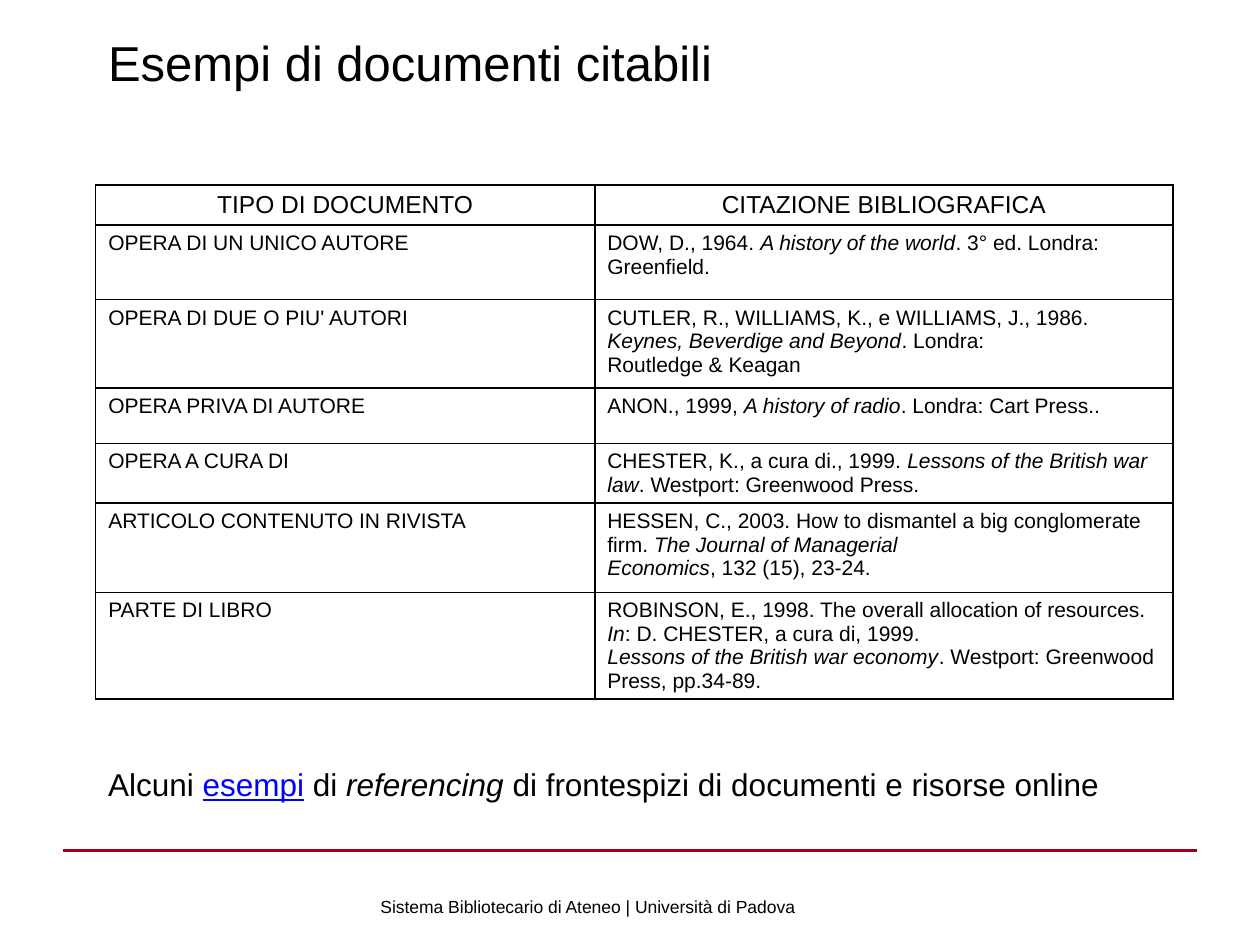
"""Build the slide that lists examples of citable documents."""
from dataclasses import dataclass

from lxml import etree
from pptx import Presentation
from pptx.dml.color import RGBColor
from pptx.enum.shapes import MSO_CONNECTOR
from pptx.enum.text import MSO_ANCHOR, PP_ALIGN
from pptx.oxml.ns import qn
from pptx.util import Cm, Pt

BLACK = RGBColor(0x00, 0x00, 0x00)
BLUE = RGBColor(0x00, 0x00, 0xFF)
CRIMSON = RGBColor(0xA5, 0x00, 0x21)
STRAIGHT = MSO_CONNECTOR.STRAIGHT
TOP, BOTTOM = MSO_ANCHOR.TOP, MSO_ANCHOR.BOTTOM
LEFT, CENTER = PP_ALIGN.LEFT, PP_ALIGN.CENTER
FONT = "Arial"
ITALIC_MARK = "_"
LINK_WORD = "esempi"
MARGIN = 1.93
COLUMN_WIDTHS = (10.06, 11.66)
BORDER_SIDES = ("a:lnL", "a:lnR", "a:lnT", "a:lnB")
BORDER_WIDTH = Pt(1)


@dataclass(frozen=True)
class Row:
    """A document type, its citation lines and the row height in centimetres."""
    kind: str
    citation: tuple[str, ...]
    height: float
    size: int = 12
    align: PP_ALIGN = LEFT


@dataclass(frozen=True)
class Label:
    """A text box with its place in centimetres."""
    text: str
    left: float
    top: float
    width: float
    height: float
    size: int
    anchor: MSO_ANCHOR = TOP
    wrap: bool = True


ROWS = (
    Row("TIPO DI DOCUMENTO", ("CITAZIONE BIBLIOGRAFICA",), 0.81, 14, CENTER),
    Row("OPERA DI UN UNICO AUTORE",
        ("DOW, D., 1964. _A history of the world_. 3° ed. Londra: Greenfield.",), 1.5),
    Row("OPERA DI DUE O PIU' AUTORI",
        ("CUTLER, R., WILLIAMS, K., e WILLIAMS, J., 1986. "
         "_Keynes, Beverdige and Beyond_. Londra:",
         "Routledge & Keagan"), 1.78),
    Row("OPERA PRIVA DI AUTORE",
        ("ANON., 1999, _A history of radio_. Londra: Cart Press..",), 1.12),
    Row("OPERA A CURA DI",
        ("CHESTER, K., a cura di., 1999. _Lessons of the British war law_. "
         "Westport: Greenwood Press.",), 1.2),
    Row("ARTICOLO CONTENUTO IN RIVISTA",
        ("HESSEN, C., 2003. How to dismantel a big conglomerate firm. "
         "_The Journal of Managerial_",
         "_Economics_, 132 (15), 23-24."), 1.8),
    Row("PARTE DI LIBRO",
        ("ROBINSON, E., 1998. The overall allocation of resources. "
         "_In_: D. CHESTER, a cura di, 1999.",
         "_Lessons of the British war economy_. Westport: Greenwood Press, pp.34-89."), 2.06),
)

LABELS = (
    Label("Sistema Bibliotecario di Ateneo | Università di Padova",
          7.42, 17.35, 9.96, 1.27, 10, BOTTOM),
    Label("Esempi di documenti citabili", MARGIN, 0.53, 17.2, 1.45, 28),
)
EXAMPLES = Label("Alcuni ", MARGIN, 15.29, 20.57, 1.02, 18, wrap=False)


def add_spans(para, text: str) -> None:
    """Add text in which marked passages are italic."""
    for index, passage in enumerate(text.split(ITALIC_MARK)):
        if passage:
            span = para.add_run()
            span.text = passage
            if index % 2:
                span.font.italic = True


def write(frame, lines: tuple[str, ...], size: int, align: PP_ALIGN = LEFT) -> None:
    """Fill a text frame with one paragraph per line."""
    for index, line in enumerate(lines):
        para = frame.add_paragraph() if index else frame.paragraphs[0]
        para.alignment = align
        para.font.name = FONT
        para.font.size = Pt(size)
        para.font.color.rgb = BLACK
        add_spans(para, line)


def add_label(page, label: Label):
    """Add a text box and return its first paragraph."""
    box = page.shapes.add_textbox(
        Cm(label.left), Cm(label.top), Cm(label.width), Cm(label.height))
    frame = box.text_frame
    frame.word_wrap = label.wrap
    frame.vertical_anchor = label.anchor
    write(frame, (label.text,), label.size)
    return frame.paragraphs[0]


def add_examples(page) -> None:
    """Add the closing sentence with its underlined word."""
    para = add_label(page, EXAMPLES)
    span = para.add_run()
    span.text = LINK_WORD
    span.font.underline = True
    span.font.color.rgb = BLUE
    add_spans(para, " di _referencing_ di frontespizi di documenti e risorse online")


def add_borders(cell) -> None:
    """Draw a black line on each side of a cell."""
    properties = cell._tc.get_or_add_tcPr()
    for side in BORDER_SIDES:
        line = etree.SubElement(properties, qn(side), w=str(BORDER_WIDTH))
        fill = etree.SubElement(line, qn("a:solidFill"))
        etree.SubElement(fill, qn("a:srgbClr"), val=str(BLACK))


def add_citations(page) -> None:
    """Add the table of document types and citations."""
    height = sum(row.height for row in ROWS)
    table = page.shapes.add_table(
        len(ROWS), len(COLUMN_WIDTHS), Cm(MARGIN), Cm(3.73),
        Cm(sum(COLUMN_WIDTHS)), Cm(height)).table
    table.first_row = False
    table.horz_banding = False
    for column, width in zip(table.columns, COLUMN_WIDTHS):
        column.width = Cm(width)
    for table_row, row in zip(table.rows, ROWS):
        table_row.height = Cm(row.height)
        for cell, lines in zip(table_row.cells, ((row.kind,), row.citation)):
            write(cell.text_frame, lines, row.size, row.align)
            add_borders(cell)
            cell.fill.background()


def add_rule(page) -> None:
    """Add the coloured line above the footer."""
    rule = page.shapes.add_connector(STRAIGHT, Cm(1.27), Cm(17.15), Cm(24.13), Cm(17.15))
    rule.line.color.rgb = CRIMSON
    rule.line.width = Pt(1.5)
    etree.SubElement(rule._element.spPr, qn("a:effectLst"))


def main() -> None:
    """Build and save the deck."""
    deck = Presentation()
    deck.slide_width, deck.slide_height = Cm(25.4), Cm(19.05)
    page = deck.slides.add_slide(deck.slide_layouts[6])
    add_rule(page)
    add_citations(page)
    for label in LABELS:
        add_label(page, label)
    add_examples(page)
    deck.save("out.pptx")


if __name__ == "__main__":
    main()
